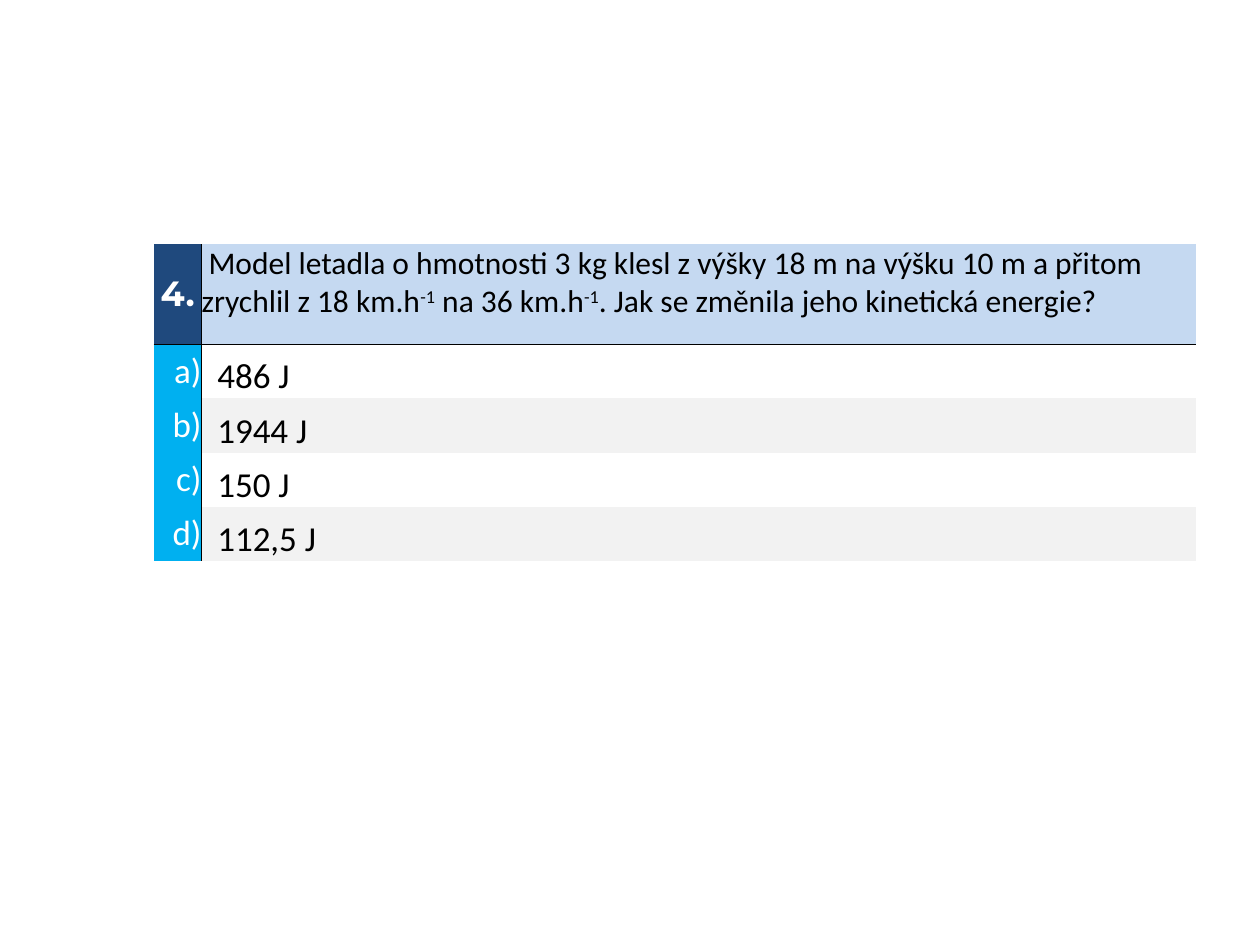
import pptx
import pptx.util
import pptx.dml.color
import pptx.enum.text
import pptx.oxml
import pptx.oxml.ns

Pt = pptx.util.Pt
ALIGN = pptx.enum.text.PP_ALIGN
ANCHOR = pptx.enum.text.MSO_ANCHOR

# Content: question pieces are (text, is_superscript)
NUMBER = "4."
QUESTION = [
    ("Model letadla o hmotnosti 3 kg klesl z výšky 18 m na výšku 10 m "
     "a přitom zrychlil z 18 km.h", False),
    ("-1", True),
    (" na 36 km.h", False),
    ("-1", True),
    (". Jak se změnila jeho kinetická energie?", False),
]
ANSWERS = [("a)", "486 J"), ("b)", "1944 J"), ("c)", "150 J"), ("d)", "112,5 J")]

THEME = {
    "navy": "1F497D", "pale": "C5D9F1", "cyan": "00B0F0", "grey": "F2F2F2",
    "white": "FFFFFF", "black": "000000",
    "body": "Calibri", "number": "Montserrat",
    "question_size": 18, "answer_size": 20, "line": 0.5,
}

# Layout in points
LEFT, TOP = 87.84, 139.68
COLUMNS = [27.36, 568.08]
QUESTION_HEIGHT, ANSWER_HEIGHT = 57, 31
QUESTION_INDENT, ANSWER_INDENT = 4, 9


def set_borders(cell, visible):
    """Draw the visible edges (letters from LRTB) and clear the others."""
    properties = cell._tc.get_or_add_tcPr()
    for position, edge in enumerate("LRTB"):
        if edge in visible:
            paint = f'<a:solidFill><a:srgbClr val="{THEME["black"]}"/></a:solidFill>'
        else:
            paint = "<a:noFill/>"
        properties.insert(position, pptx.oxml.parse_xml(
            f'<a:ln{edge} {pptx.oxml.ns.nsdecls("a")} w="{Pt(THEME["line"])}">'
            f"{paint}</a:ln{edge}>"))


def fill_cell(cell, pieces, fill, color, size, borders, align=ALIGN.LEFT,
              anchor=ANCHOR.MIDDLE, font="body", bold=False, inset=0):
    cell.margin_right = cell.margin_top = cell.margin_bottom = 0
    cell.margin_left = Pt(inset)
    cell.vertical_anchor = anchor
    if fill:
        cell.fill.solid()
        cell.fill.fore_color.rgb = pptx.dml.color.RGBColor.from_string(THEME[fill])
    else:
        cell.fill.background()
    set_borders(cell, borders)

    para = cell.text_frame.paragraphs[0]
    para.alignment = align
    para.font.name = THEME[font]
    para.font.size = Pt(THEME[size])
    para.font.bold = bold
    para.font.color.rgb = pptx.dml.color.RGBColor.from_string(THEME[color])
    for text, raised in pieces:
        span = para.add_run()
        span.text = text
        if raised:
            span.font._element.set("baseline", "30000")
    return para


def main():
    deck = pptx.Presentation()
    deck.slide_width, deck.slide_height = Pt(720), Pt(540)
    page = deck.slides.add_slide(deck.slide_layouts[6])

    # Table grid
    heights = [QUESTION_HEIGHT] + [ANSWER_HEIGHT] * len(ANSWERS)
    table = page.shapes.add_table(
        len(heights), len(COLUMNS), Pt(LEFT), Pt(TOP),
        Pt(sum(COLUMNS)), Pt(sum(heights))).table
    table.first_row = table.horz_banding = False
    for column, width in zip(table.columns, COLUMNS):
        column.width = Pt(width)
    for row, height in zip(table.rows, heights):
        row.height = Pt(height)

    # Question row
    fill_cell(table.cell(0, 0), [(NUMBER, False)], "navy", "white", "answer_size",
              "RB", align=ALIGN.CENTER, font="number", bold=True)
    para = fill_cell(table.cell(0, 1), QUESTION, "pale", "black", "question_size",
                     "LB", anchor=ANCHOR.TOP)
    para._p.get_or_add_pPr().set("indent", str(Pt(QUESTION_INDENT)))

    # Answer rows, every second one shaded
    for index, (letter, answer) in enumerate(ANSWERS):
        top_edge = "T" if index == 0 else ""
        fill_cell(table.cell(index + 1, 0), [(letter, False)], "cyan", "white",
                  "answer_size", "R" + top_edge, align=ALIGN.RIGHT)
        fill_cell(table.cell(index + 1, 1), [(answer, False)],
                  "grey" if index % 2 else None, "black", "answer_size",
                  "L" + top_edge, anchor=ANCHOR.BOTTOM, inset=ANSWER_INDENT)

    deck.save("out.pptx")


if __name__ == "__main__":
    main()
